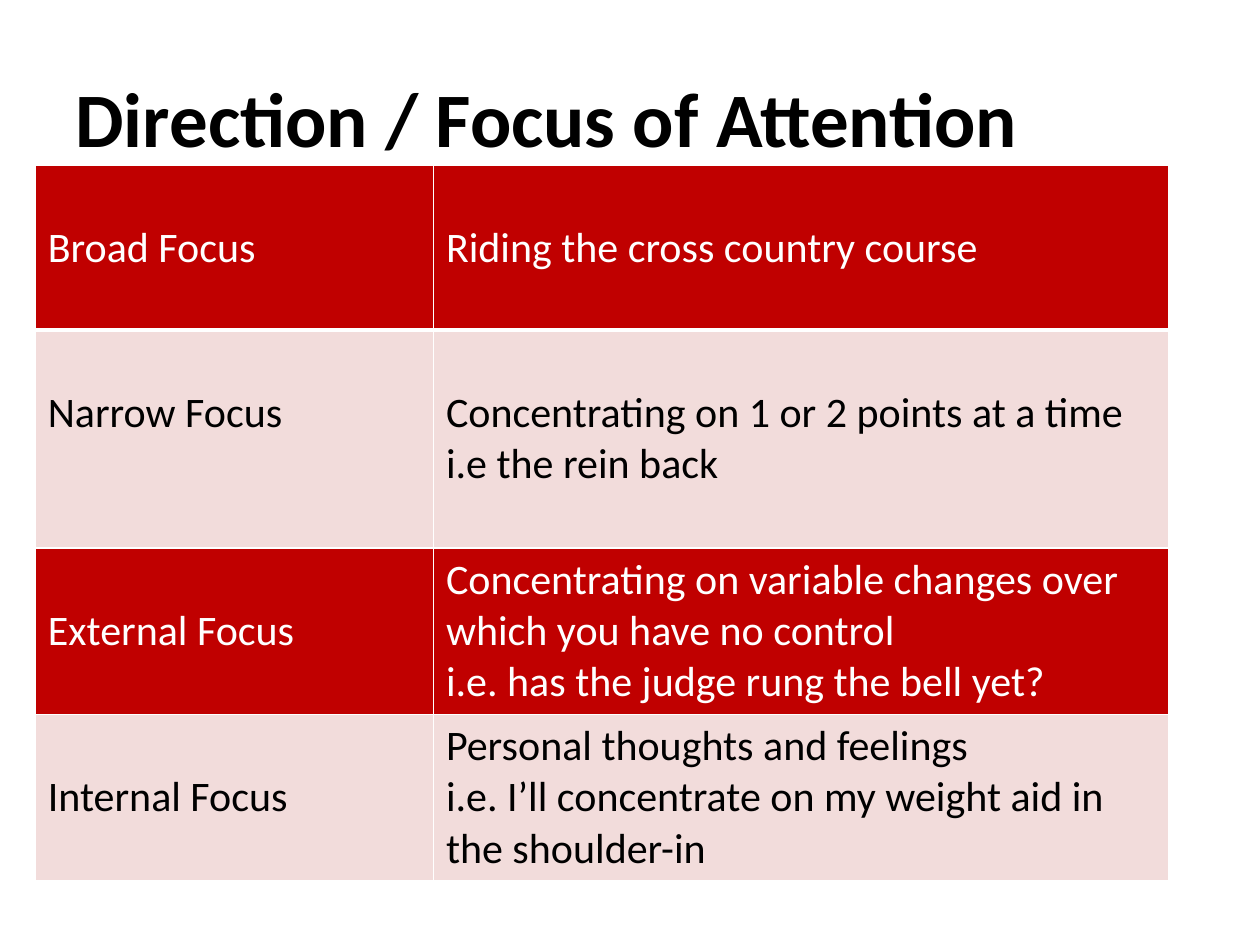
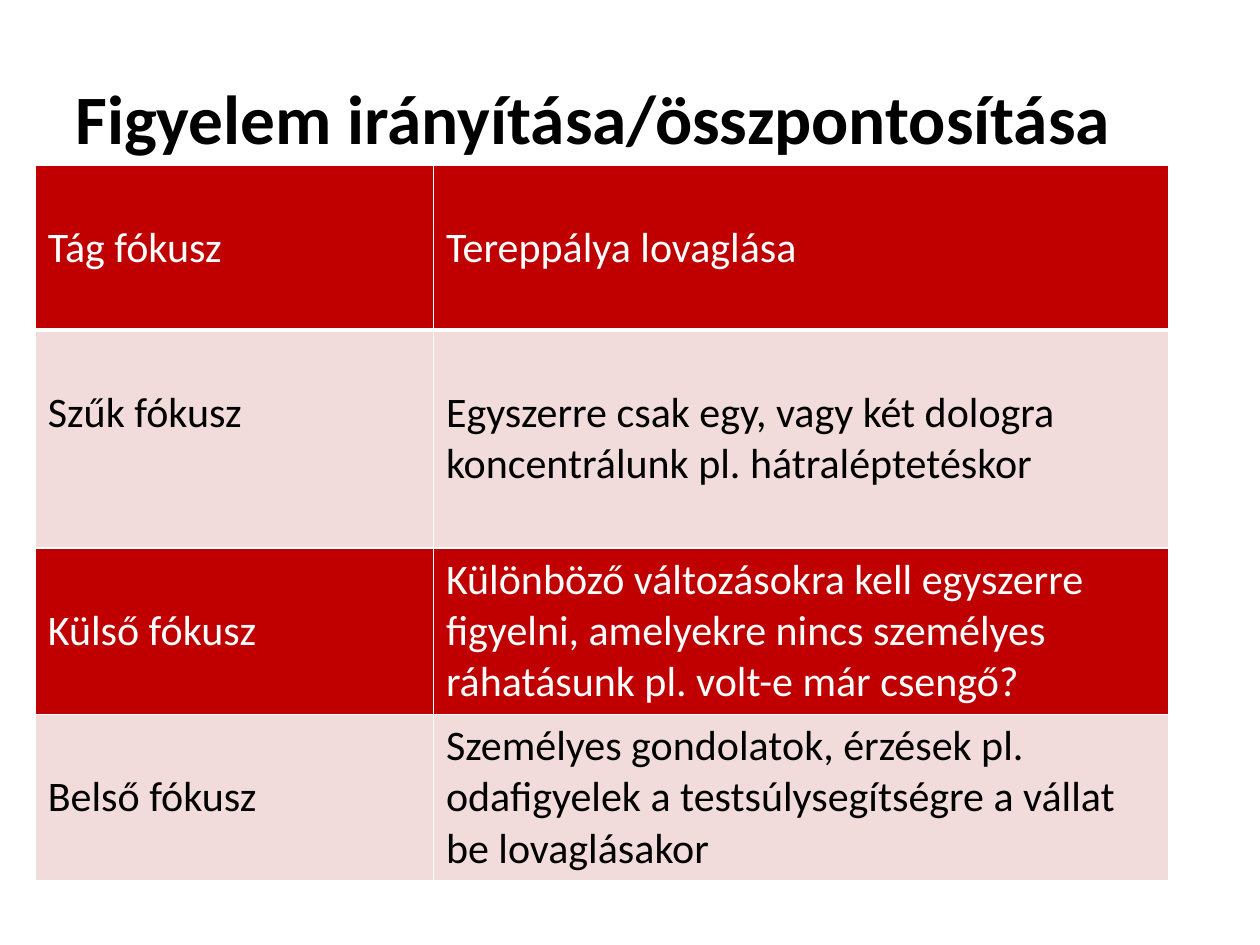
from dataclasses import dataclass

from lxml.etree import SubElement
from pptx import Presentation
from pptx.dml.color import RGBColor
from pptx.enum.text import MSO_ANCHOR as Anchor
from pptx.oxml.ns import qn
from pptx.util import Emu, Inches, Pt

# Shared look
RED = RGBColor(0xC0, 0x00, 0x00)
PINK = RGBColor(0xF2, 0xDC, 0xDB)
WHITE = RGBColor(0xFF, 0xFF, 0xFF)
BLACK = RGBColor(0x00, 0x00, 0x00)
FONT = "Calibri"
BODY_SIZE = 24

# Grid of 100 columns and 75 rows
WIDTH, HEIGHT = Inches(10), Inches(7.5)
COL, ROW = WIDTH / 100, HEIGHT / 75
COLUMN_WIDTHS = (31.6, 58.4)
ROW_HEIGHTS = (13.1, 17.3, 13.2, 13.2)
CELL_PAD = 0.5
TEXT_LINE = 4.07


@dataclass
class Focus:
    name: str
    example: str
    example_drop: int = 0  # text lines left free above the example


@dataclass
class FocusSlide:
    title: str
    title_size: float
    focuses: list[Focus]


SLIDES = [
    FocusSlide("Direction / Focus of Attention", 44, [
        Focus("Broad Focus", "Riding the cross country course", 1),
        Focus("Narrow Focus",
              "Concentrating on 1 or 2 points at a time\ni.e the rein back", 1),
        Focus("External Focus",
              "Concentrating on variable changes over which you have no control\n"
              "i.e. has the judge rung the bell yet?"),
        Focus("Internal Focus",
              "Personal thoughts and feelings\n"
              "i.e. I’ll concentrate on my weight aid in the shoulder-in"),
    ]),
    FocusSlide("Figyelem irányítása/összpontosítása", 39.6, [
        Focus("Tág fókusz", "Tereppálya lovaglása", 1),
        Focus("Szűk fókusz",
              "Egyszerre csak egy, vagy két dologra koncentrálunk "
              "pl. hátraléptetéskor", 1),
        Focus("Külső fókusz",
              "Különböző változásokra kell egyszerre figyelni, amelyekre nincs "
              "személyes ráhatásunk pl. volt-e már csengő?"),
        Focus("Belső fókusz",
              "Személyes gondolatok, érzések pl. odafigyelek a "
              "testsúlysegítségre a vállat be lovaglásakor"),
    ]),
]


def cols(n: float) -> Emu:
    return Emu(round(n * COL))


def rows(n: float) -> Emu:
    return Emu(round(n * ROW))


def write(tf, text: str, size: float, color: RGBColor, bold: bool = False) -> None:
    tf.text = text
    tf.word_wrap = True
    for p in tf.paragraphs:
        p.font.name = FONT
        p.font.size = Pt(size)
        p.font.bold = bold
        p.font.color.rgb = color


def add_title(s, text: str, size: float) -> None:
    tf = s.shapes.add_textbox(cols(5), rows(3), cols(90), rows(12.5)).text_frame
    write(tf, text, size, BLACK, bold=True)
    tf.vertical_anchor = Anchor.MIDDLE


def add_borders(cell, top: float, bottom: float) -> None:
    tc_pr = cell._tc.get_or_add_tcPr()
    for side, width in (("L", 1), ("R", 1), ("T", top), ("B", bottom)):
        ln = SubElement(tc_pr, qn(f"a:ln{side}"), w=str(Pt(width)))
        fill = SubElement(ln, qn("a:solidFill"))
        SubElement(fill, qn("a:srgbClr"), val=str(WHITE))


def fill_cell(cell, text: str, row: int, drop: int) -> None:
    back, ink = (PINK, BLACK) if row % 2 else (RED, WHITE)
    add_borders(cell, top=3 if row == 1 else 1, bottom=3 if row == 0 else 1)
    cell.fill.solid()
    cell.fill.fore_color.rgb = back
    cell.margin_top = rows(CELL_PAD + drop * TEXT_LINE)
    write(cell.text_frame, text, BODY_SIZE, ink)


def add_focus_table(s, focuses: list[Focus]) -> None:
    table = s.shapes.add_table(
        len(focuses), len(COLUMN_WIDTHS), cols(2.8), rows(13.1),
        cols(sum(COLUMN_WIDTHS)), rows(sum(ROW_HEIGHTS))).table
    table.first_row = table.horz_banding = False
    for column, width in zip(table.columns, COLUMN_WIDTHS):
        column.width = cols(width)
    for i, (focus, height) in enumerate(zip(focuses, ROW_HEIGHTS)):
        table.rows[i].height = rows(height)
        fill_cell(table.cell(i, 0), focus.name, i, drop=1)
        fill_cell(table.cell(i, 1), focus.example, i, focus.example_drop)


def main() -> None:
    prs = Presentation()
    prs.slide_width, prs.slide_height = WIDTH, HEIGHT
    for content in SLIDES:
        s = prs.slides.add_slide(prs.slide_layouts[6])
        add_title(s, content.title, content.title_size)
        add_focus_table(s, content.focuses)
    prs.save("out.pptx")


if __name__ == "__main__":
    main()
